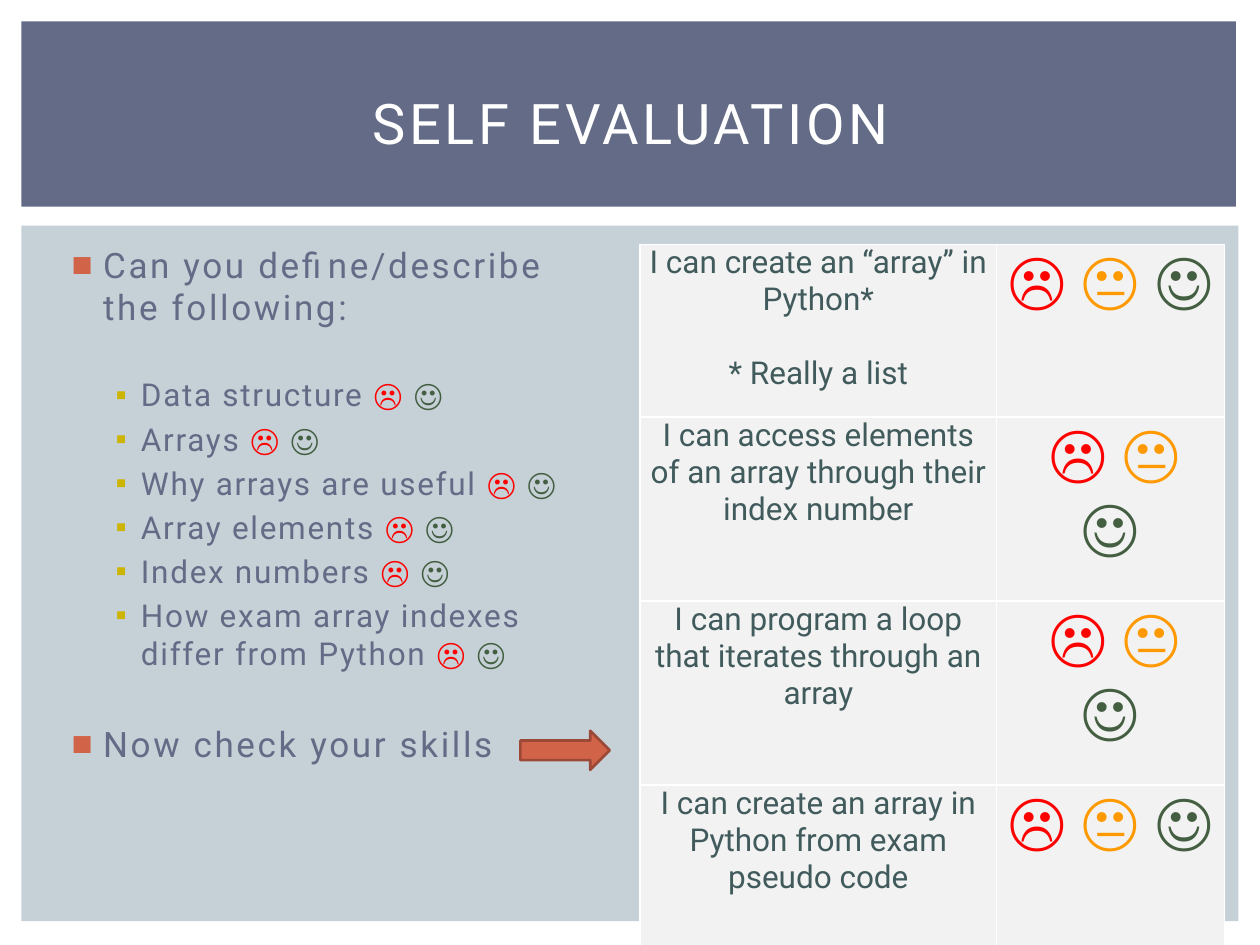
from dataclasses import dataclass
from typing import NamedTuple

from lxml.etree import SubElement
from pptx import Presentation
from pptx.dml.color import RGBColor
from pptx.enum.shapes import MSO_SHAPE as Shape
from pptx.enum.text import MSO_ANCHOR as Anchor, PP_ALIGN as Align
from pptx.oxml.ns import qn
from pptx.util import Inches, Pt


@dataclass(frozen=True)
class Theme:
    font: str = "Roboto"
    slate: str = "646B86"
    panel: str = "C5D1D7"
    accent: str = "D16349"
    accent_dark: str = "9B4936"
    mustard: str = "CCB400"
    cell: str = "F2F2F2"
    cell_text: str = "415B5C"
    white: str = "FFFFFF"
    red: str = "FF0000"
    amber: str = "FF9900"
    green: str = "435E40"
    title: int = 32
    heading: int = 20
    body: int = 18
    face: int = 36


T = Theme()


class Run(NamedTuple):
    text: str
    size: int
    color: str
    bold: bool = False
    spacing: float = 0


class Level(NamedTuple):
    indent: float
    hanging: float
    bullet: str
    color: str
    space: float


class Item(NamedTuple):
    level: Level
    runs: list
    extra_before: float = 0


class Skill(NamedTuple):
    lines: list
    height: float
    wraps: bool = False


def rgb(value: str) -> RGBColor:
    return RGBColor.from_string(value)


def add_runs(p, runs: list) -> None:
    for run in runs:
        r = p.add_run()
        r.text = run.text
        formats = {"name": T.font, "size": Pt(run.size), "bold": run.bold}
        for name, value in formats.items():
            setattr(r.font, name, value)
        r.font.color.rgb = rgb(run.color)
        if run.spacing:
            r.font._element.set("spc", str(int(run.spacing * 100)))


def add_block(s, kind, box: tuple, fill: str, line: str = ""):
    sp = s.shapes.add_shape(kind, *map(Inches, box))
    sp.shadow.inherit = False
    sp.fill.solid()
    sp.fill.fore_color.rgb = rgb(fill)
    if line:
        sp.line.color.rgb = rgb(line)
        sp.line.width = Pt(1.5)
    else:
        sp.line.fill.background()
    return sp


def add_text_box(s, box: tuple, anchor):
    tf = s.shapes.add_textbox(*map(Inches, box)).text_frame
    tf.word_wrap = True
    tf.vertical_anchor = anchor
    return tf


def set_bullet(p, level: Level) -> None:
    pPr = p._p.get_or_add_pPr()
    pPr.set("marL", str(Inches(level.indent)))
    pPr.set("indent", str(-Inches(level.hanging)))
    color = SubElement(pPr, qn("a:buClr"))
    SubElement(color, qn("a:srgbClr"), val=level.color)
    SubElement(pPr, qn("a:buFont"), typeface="Arial")
    SubElement(pPr, qn("a:buChar"), char=level.bullet)


def add_list(tf, items: list) -> None:
    for i, item in enumerate(items):
        p = tf.paragraphs[0] if i == 0 else tf.add_paragraph()
        p.space_before = Pt(item.level.space + item.extra_before)
        set_bullet(p, item.level)
        add_runs(p, item.runs)


def style_cell(cell) -> None:
    tcPr = cell._tc.get_or_add_tcPr()
    for side in ("lnL", "lnR", "lnT", "lnB"):
        ln = SubElement(tcPr, qn(f"a:{side}"), w=str(Pt(1)))
        fill = SubElement(ln, qn("a:solidFill"))
        SubElement(fill, qn("a:srgbClr"), val=T.white)
    cell.fill.solid()
    cell.fill.fore_color.rgb = rgb(T.cell)
    margins = {"margin_left": 0.07, "margin_right": 0.07, "margin_top": 0, "margin_bottom": 0}
    for name, value in margins.items():
        setattr(cell, name, Inches(value))


def fill_cell(cell, paragraphs: list) -> None:
    style_cell(cell)
    tf = cell.text_frame
    for i, runs in enumerate(paragraphs):
        p = tf.paragraphs[0] if i == 0 else tf.add_paragraph()
        p.alignment = Align.CENTER
        if i:
            p.space_before = Pt(21)
        add_runs(p, runs)


def add_skills_table(s, left: float, top: float, widths: tuple, skills: list) -> None:
    height = sum(skill.height for skill in skills)
    box = (left, top, sum(widths), height)
    table = s.shapes.add_table(len(skills), len(widths), *map(Inches, box)).table
    table.first_row = table.horz_banding = False
    for column, width in zip(table.columns, widths):
        column.width = Inches(width)
    faces = [Run("☹ ", T.face, T.red, True), Run("😐 ", T.face, T.amber, True),
             Run("☺", T.face, T.green, True)]
    for i, skill in enumerate(skills):
        table.rows[i].height = Inches(skill.height)
        fill_cell(table.cell(i, 0), [[Run(line, T.body, T.cell_text)] for line in skill.lines])
        lead = [Run(chr(160), T.body, T.cell_text)] if skill.wraps else []
        fill_cell(table.cell(i, 1), [lead + faces])


HEADING = Level(0.3, 0.25, "■", T.accent, 4)
TERM = Level(0.6, 0.2, "▪", T.mustard, 3.6)
TERMS = ["Data structure", "Arrays", "Why arrays are useful", "Array elements",
         "Index numbers", "How exam array indexes differ from Python"]
SKILLS = [
    Skill(["I can create an “array” in Python*", "* Really a list"], 1.37),
    Skill(["I can access elements of an array through their index number"], 1.46, True),
    Skill(["I can program a loop that iterates through an array"], 1.46, True),
    Skill(["I can create an array in Python from exam pseudo code"], 1.3),
]


def heading(text: str, extra_before: float = 0) -> Item:
    return Item(HEADING, [Run(text, T.heading, T.slate, spacing=1.5)], extra_before)


def term(text: str, extra_before: float = 0) -> Item:
    return Item(TERM, [Run(text + " ", T.body, T.slate, spacing=1),
                       Run("☹ ", T.body, T.red, True, 1),
                       Run("☺", T.body, T.green, True, 1)], extra_before)


def main() -> None:
    prs = Presentation()
    prs.slide_width, prs.slide_height = Inches(10), Inches(7.5)
    s = prs.slides.add_slide(prs.slide_layouts[6])

    # Background panels
    add_block(s, Shape.RECTANGLE, (0.17, 1.79, 9.66, 5.52), T.panel)
    add_block(s, Shape.RECTANGLE, (0.17, 0.17, 9.64, 1.47), T.slate)

    # Title
    p = add_text_box(s, (0.42, 0.39, 9.17, 1.15), Anchor.MIDDLE).paragraphs[0]
    p.alignment = Align.CENTER
    add_runs(p, [Run("SELF EVALUATION", T.title, T.white, spacing=2)])

    # Checklist of terms
    items = [heading("Can you define/describe the following:")]
    items += [term(text, 0 if i else 24) for i, text in enumerate(TERMS)]
    items.append(heading("Now check your skills", 25))
    add_list(add_text_box(s, (0.42, 1.88, 4.35, 4.82), Anchor.TOP), items)

    # Skills table and the arrow leading to it
    add_skills_table(s, 5.08, 1.94, (2.83, 1.81), SKILLS)
    add_block(s, Shape.RIGHT_ARROW, (4.13, 5.8, 0.71, 0.31), T.accent, T.accent_dark)

    prs.save("out.pptx")


if __name__ == "__main__":
    main()
